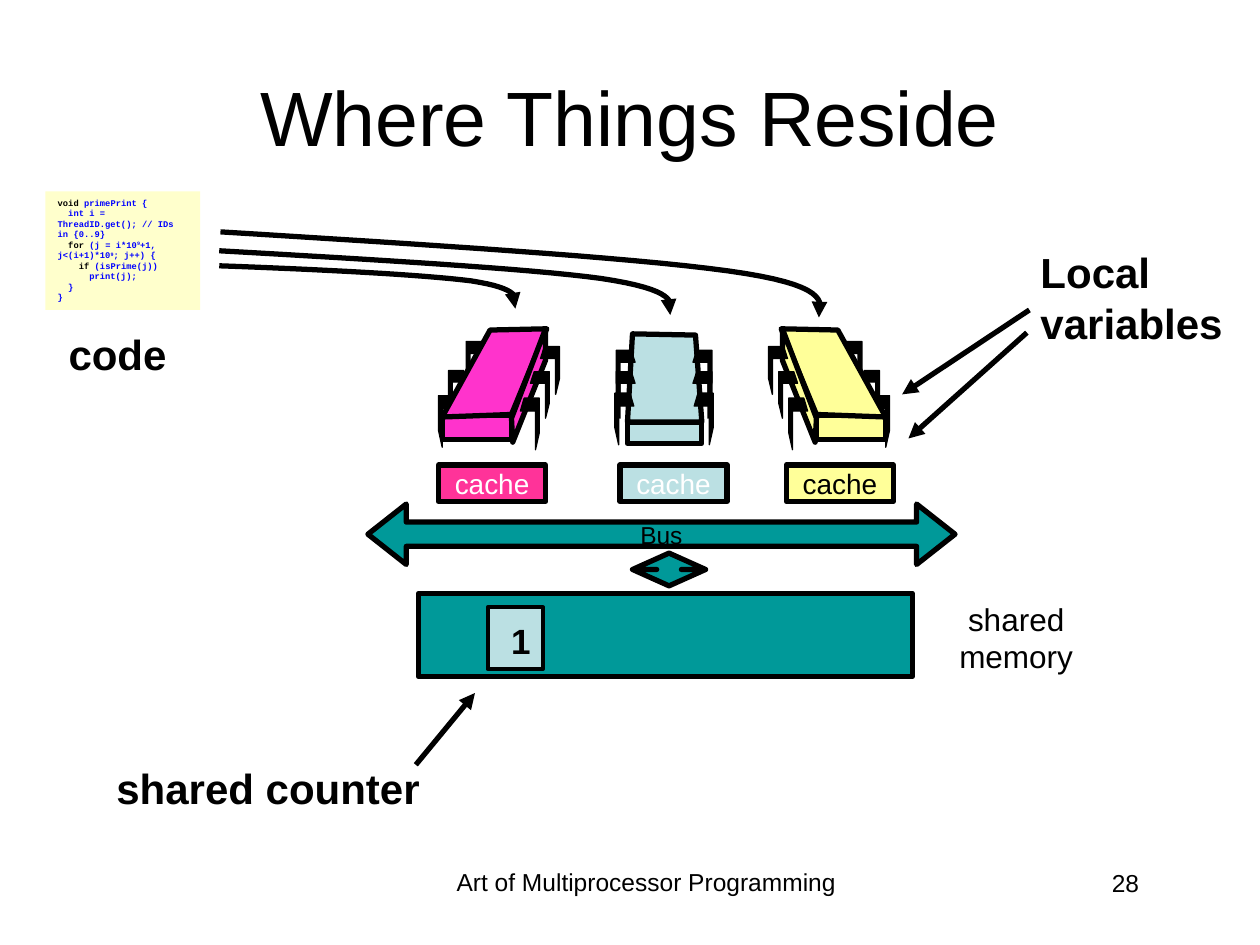
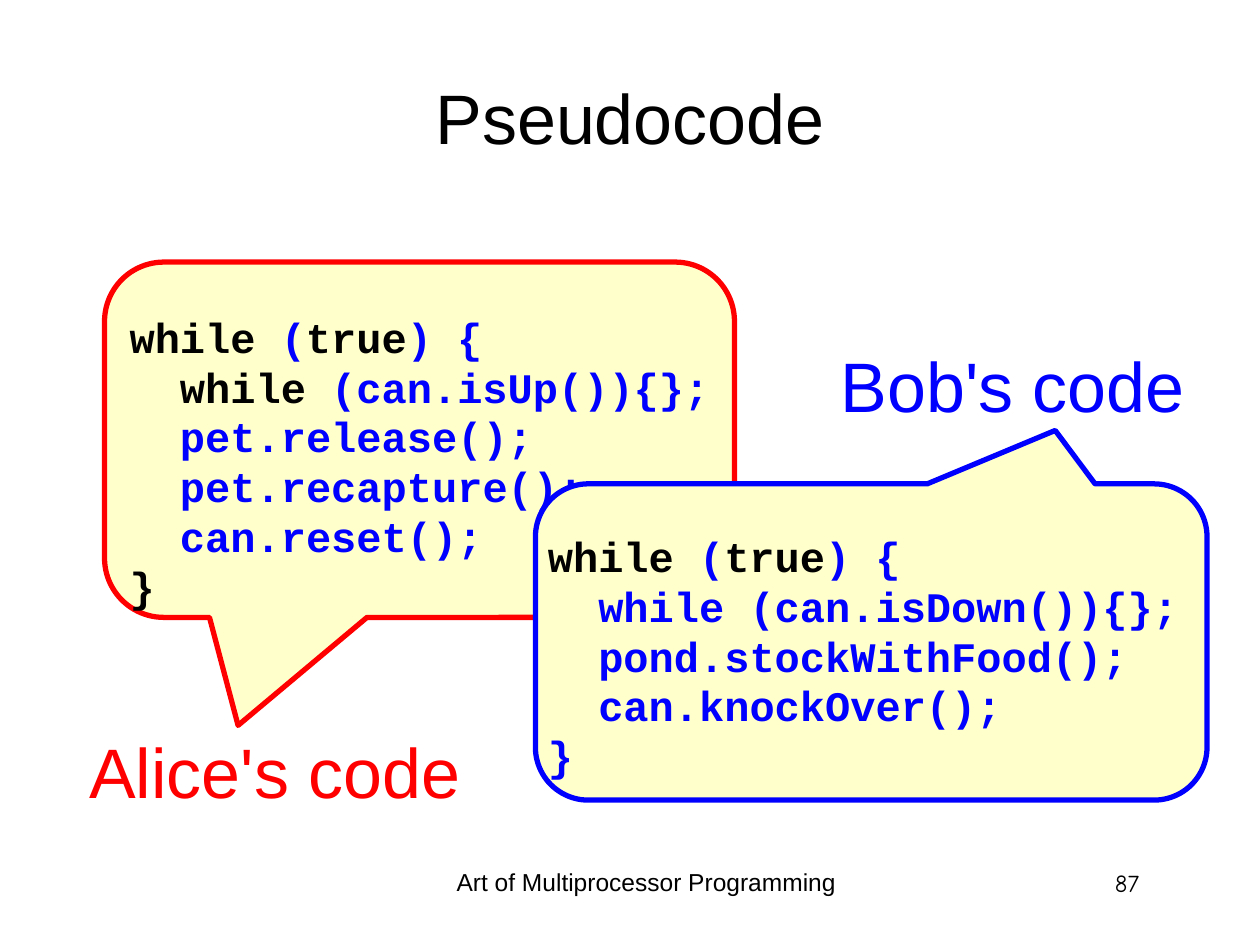
from lxml.etree import SubElement
from pptx import Presentation
from pptx.dml.color import RGBColor
from pptx.enum.shapes import MSO_CONNECTOR, MSO_SHAPE
from pptx.enum.text import MSO_ANCHOR, MSO_AUTO_SIZE, PP_ALIGN
from pptx.oxml.ns import qn
from pptx.util import Inches, Pt

COLORS = {
    "black": "000000", "white": "FFFFFF", "red": "FF0000", "blue": "0000FF",
    "cream": "FFFFCC", "pink": "FF33CC", "rose": "FF3399", "ice": "BBE0E3",
    "lemon": "FFFF99", "teal": "009999",
}
FOOTER = "Art of Multiprocessor Programming"
LEFT, CENTER, RIGHT = PP_ALIGN.LEFT, PP_ALIGN.CENTER, PP_ALIGN.RIGHT

# Code lines are lists of (text, colour) runs; "sup" marks a superscript.
PRIME_CODE = [
    [("void", "black"), (" primePrint {", "blue")],
    [("  int i = ThreadID.get(); // IDs in {0..9}", "blue")],
    [("  for ", "black"), ("(j = i*10", "blue"), ("9", "blue", "sup"),
     ("+1, j<(i+1)*10", "blue"), ("9", "blue", "sup"), ("; j++) {", "blue")],
    [("    if ", "black"), ("(isPrime(j))", "blue")],
    [("      print(j);", "blue")],
    [("  }", "blue")],
    [("}", "blue")],
]
LOOP_HEAD = [("while", "black"), (" (", "blue"), ("true", "black"), (") {", "blue")]
ALICE_CODE = [
    LOOP_HEAD,
    [("  while", "black"), (" (can.isUp()){};", "blue")],
    [("  pet.release();", "blue")],
    [("  pet.recapture();", "blue")],
    [("  can.reset();", "blue")],
    [("}", "black")],
]
BOB_CODE = [
    LOOP_HEAD,
    [("  while (can.isDown()){};", "blue")],
    [("  pond.stockWithFood();", "blue")],
    [("  can.knockOver();", "blue")],
    [("}", "blue")],
]

CACHES = [(3.48, "rose", "white"), (4.92, "ice", "white"), (6.24, "lemon", "black")]
CHIP_AXIS = 5.27  # the outer chips mirror each other about this x

# Pins: outer x, top, height
MIDDLE_PINS = [(4.88, 3.12, 0.41), (4.89, 2.95, 0.37), (4.89, 2.78, 0.38)]
SIDE_OUTER_PINS = [(3.48, 3.14, 0.41), (3.56, 2.94, 0.37), (3.7, 2.71, 0.38)]
SIDE_INNER_PINS = [(4.28, 3.16, 0.41), (4.36, 2.95, 0.37), (4.44, 2.75, 0.38)]
MIDDLE_TOP = [(5.02, 2.65), (5.52, 2.66), (5.57, 3.35), (4.98, 3.35)]
SIDE_TOP = [(3.51, 3.31), (4.06, 3.29), (4.34, 2.61), (3.89, 2.62)]
SIDE_FLANK = [(4.33, 2.61), (4.33, 2.86), (4.07, 3.51), (4.06, 3.32)]

# Two joined Bézier curves each: start, then three points per curve
CODE_TO_CHIP = [
    [(1.74, 1.99), (2.96, 2.06), (4.18, 2.13), (4.77, 2.21),
     (5.37, 2.3), (5.34, 2.4), (5.32, 2.5)],
    [(1.75, 1.84), (3.36, 1.94), (4.98, 2.04), (5.78, 2.15),
     (6.57, 2.26), (6.53, 2.39), (6.5, 2.52)],
    [(1.74, 2.11), (2.55, 2.14), (3.35, 2.18), (3.74, 2.23),
     (4.13, 2.29), (4.11, 2.37), (4.09, 2.45)],
]
POINTERS = [((3.3, 6.07), (3.77, 5.5)), ((8.17, 2.46), (7.16, 3.13)),
            ((8.15, 2.64), (7.21, 3.48))]

# Box, lines, size, colour, bold, alignment
MACHINE_LABELS = [
    ((3.94, 4.87, 0.37, 0.43), ["1"], 20, "black", True, RIGHT),
    ((0.81, 6, 2.62, 0.5), ["shared counter"], 24, "black", True, RIGHT),
    ((7.51, 4.71, 1.11, 0.7), ["shared", "memory"], 18, "black", False, CENTER),
    ((0.43, 2.56, 0.99, 0.51), ["code"], 24, "black", True, RIGHT),
    ((8.16, 1.91, 1.66, 0.91), ["Local", "variables"], 24, "black", True, LEFT),
]
# Callout box, adjustments, line colour, code box, code, label box, label
CALLOUTS = [
    ((0.83, 2.08, 5, 2.82), (-0.288, 0.804, 0.167), "red",
     (0.93, 2.42, 5.49, 2.4), ALICE_CODE, (0.5, 5.73, 3.25, 0.77), "Alice's code"),
    ((4.25, 3.84, 5.33, 2.51), (0.274, -0.669, 0.167), "blue",
     (4.25, 4.16, 5.4, 2), BOB_CODE, (6.53, 2.67, 2.97, 0.77), "Bob's code"),
]


def rgb(name):
    return RGBColor.from_string(COLORS[name])


def inches(values):
    return [Inches(v) for v in values]


def paint(sp, fill, line="black", width=3):
    sp.shadow.inherit = False
    if fill:
        sp.fill.solid()
        sp.fill.fore_color.rgb = rgb(fill)
    else:
        sp.fill.background()
    sp.line.color.rgb = rgb(line)
    sp.line.width = Pt(width)


def add_tail(sp):
    SubElement(sp._element.spPr.find(qn("a:ln")), qn("a:tailEnd"), type="triangle")


def style(p, size, color="black", bold=False, align=LEFT, font="Arial"):
    p.alignment = align
    p.font.size, p.font.name, p.font.bold = Pt(size), font, bold
    p.font.color.rgb = rgb(color)


def paragraphs(tf, lines):
    """Yield a paragraph of the frame with each line."""
    for i, line in enumerate(lines):
        yield (tf.add_paragraph() if i else tf.paragraphs[0]), line


def add_text(slide, box, lines, size, color="black", bold=False, align=LEFT,
             font="Arial", wrap=False, grow=True):
    tf = slide.shapes.add_textbox(*inches(box)).text_frame
    tf.word_wrap = wrap
    tf.auto_size = MSO_AUTO_SIZE.SHAPE_TO_FIT_TEXT if grow else MSO_AUTO_SIZE.NONE
    for p, line in paragraphs(tf, lines):
        p.text = line
        style(p, size, color, bold, align, font)
    return tf


def add_code(slide, box, lines, size, tight=False):
    """Add coloured code; tight sets close lines with gaps between them."""
    sp = slide.shapes.add_textbox(*inches(box))
    tf = sp.text_frame
    tf.word_wrap = True
    tf.auto_size = MSO_AUTO_SIZE.SHAPE_TO_FIT_TEXT
    if tight:
        tf.margin_top = Inches(0.16)
    for i, (p, line) in enumerate(paragraphs(tf, lines)):
        style(p, size, bold=True, font="Courier New")
        if tight:
            p.line_spacing = 0.7
            if i:
                p.space_before = Pt(8.3)
        for text, color, *sup in line:
            r = p.add_run()
            r.text = text
            r.font.color.rgb = rgb(color)
            if sup:
                r._r.get_or_add_rPr().set("baseline", "30000")
    return sp


def add_block(slide, kind, box, fill, line="black", adjust=(), width=3,
              text="", size=16, color="black"):
    sp = slide.shapes.add_shape(kind, *inches(box))
    paint(sp, fill, line, width)
    for i, value in enumerate(adjust):
        sp.adjustments[i] = value
    if text:
        tf = sp.text_frame
        tf.word_wrap = False
        tf.vertical_anchor = MSO_ANCHOR.MIDDLE
        tf.text = text
        style(tf.paragraphs[0], size, color, align=CENTER)
    return sp


def add_outline(slide, points, fill, width=3, mirror=False, close=True):
    if mirror:
        points = [(2 * CHIP_AXIS - x, y) for x, y in points]
    start, *rest = [inches(pt) for pt in points]
    builder = slide.shapes.build_freeform(*start)
    builder.add_line_segments(rest, close=close)
    sp = builder.convert_to_shape()
    paint(sp, fill, width=width)
    return sp


def add_pins(slide, pins, side, mirror=False):
    """Draw bent pins whose inner ends lie towards side (1 right, -1 left)."""
    for x, y, h in pins:
        bend = [(0.12, 0), (0, 0), (0, 0.67), (0.03, 1), (0.03, 0.25), (0.15, 0.25)]
        points = [(x + side * dx, y + dy * h) for dx, dy in bend]
        add_outline(slide, points, "black", 0.75, mirror)


def add_side_chip(slide, fill, mirror=False):
    left, width = 3.51, 0.55
    if mirror:
        left = 2 * CHIP_AXIS - left - width
    add_block(slide, MSO_SHAPE.RECTANGLE, (left, 3.3, width, 0.19), fill)
    add_pins(slide, SIDE_OUTER_PINS, 1, mirror)
    add_outline(slide, SIDE_TOP, fill, mirror=mirror)
    add_outline(slide, SIDE_FLANK, fill, mirror=mirror)
    add_pins(slide, SIDE_INNER_PINS, -1, mirror)


def add_middle_chip(slide, fill):
    add_block(slide, MSO_SHAPE.RECTANGLE, (4.98, 3.35, 0.59, 0.17), fill)
    add_outline(slide, MIDDLE_TOP, fill)
    for mirror in (True, False):
        add_pins(slide, MIDDLE_PINS, 1, mirror)


def bezier(points, steps=16):
    """Sample joined cubic curves as a list of points."""
    out = [points[0]]
    for k in range(0, len(points) - 1, 3):
        curve = points[k:k + 4]
        for n in range(1, steps + 1):
            t = n / steps
            weights = ((1 - t) ** 3, 3 * t * (1 - t) ** 2, 3 * t * t * (1 - t), t ** 3)
            out.append(tuple(sum(w * pt[a] for w, pt in zip(weights, curve))
                             for a in (0, 1)))
    return out


def add_arrow(slide, start, end):
    line = slide.shapes.add_connector(MSO_CONNECTOR.STRAIGHT, *inches(start + end))
    line.line.color.rgb = rgb("black")
    line.line.width = Pt(3)
    add_tail(line)
    SubElement(line._element.spPr, qn("a:effectLst"))


def new_slide(prs, title, title_size, title_box, number, number_font="Arial"):
    slide = prs.slides.add_slide(prs.slide_layouts[6])
    add_text(slide, (3.42, 6.83, 3.42, 0.52), [FOOTER], 14, align=CENTER,
             wrap=True, grow=False)
    add_text(slide, (7.06, 6.84, 2.08, 0.5), [number], 14, align=RIGHT,
             font=number_font, wrap=True, grow=False)
    tf = add_text(slide, title_box, [title], title_size, align=CENTER,
                  wrap=True, grow=False)
    tf.vertical_anchor = MSO_ANCHOR.MIDDLE
    return slide


def build_machine(prs):
    slide = new_slide(prs, "Where Things Reside", 44, (0.75, 0.29, 8.5, 1.25), "28")
    add_middle_chip(slide, "ice")
    add_side_chip(slide, "pink")
    add_side_chip(slide, "lemon", mirror=True)
    add_block(slide, MSO_SHAPE.LEFT_RIGHT_ARROW, (2.92, 4, 4.66, 0.48), "teal",
              adjust=(0.401, 0.635), text="Bus", size=14)
    add_block(slide, MSO_SHAPE.RECTANGLE, (3.32, 4.71, 3.92, 0.66), "teal")
    add_block(slide, MSO_SHAPE.UP_DOWN_ARROW, (5.02, 4.39, 0.58, 0.26), "teal",
              adjust=(0.5, 0.338))
    for left, fill, color in CACHES:
        add_block(slide, MSO_SHAPE.RECTANGLE, (left, 3.69, 0.85, 0.29), fill,
                  text="cache", color=color)
    add_block(slide, MSO_SHAPE.RECTANGLE, (3.87, 4.82, 0.44, 0.49), "ice", width=2.25)
    code = add_code(slide, (0.36, 1.52, 1.23, 0.94), PRIME_CODE, 5)
    code.fill.solid()
    code.fill.fore_color.rgb = rgb("cream")
    for label in MACHINE_LABELS:
        add_text(slide, *label)
    for curve in CODE_TO_CHIP:
        add_tail(add_outline(slide, bezier(curve), None, close=False))
    for start, end in POINTERS:
        add_arrow(slide, start, end)


def build_pseudocode(prs):
    slide = new_slide(prs, "Pseudocode", 40, (0.5, 0.3, 9, 1.25), "87", "Comic Neue")
    for box, adjust, color, code_box, code, label_box, label in CALLOUTS:
        add_block(slide, MSO_SHAPE.ROUNDED_RECTANGULAR_CALLOUT, box, "cream", color,
                  adjust)
        add_code(slide, code_box, code, 24, tight=True)
        add_text(slide, label_box, [label], 40, color, align=RIGHT)


def main():
    prs = Presentation()
    prs.slide_width, prs.slide_height = Inches(10), Inches(7.5)
    build_machine(prs)
    build_pseudocode(prs)
    prs.save("out.pptx")


if __name__ == "__main__":
    main()
